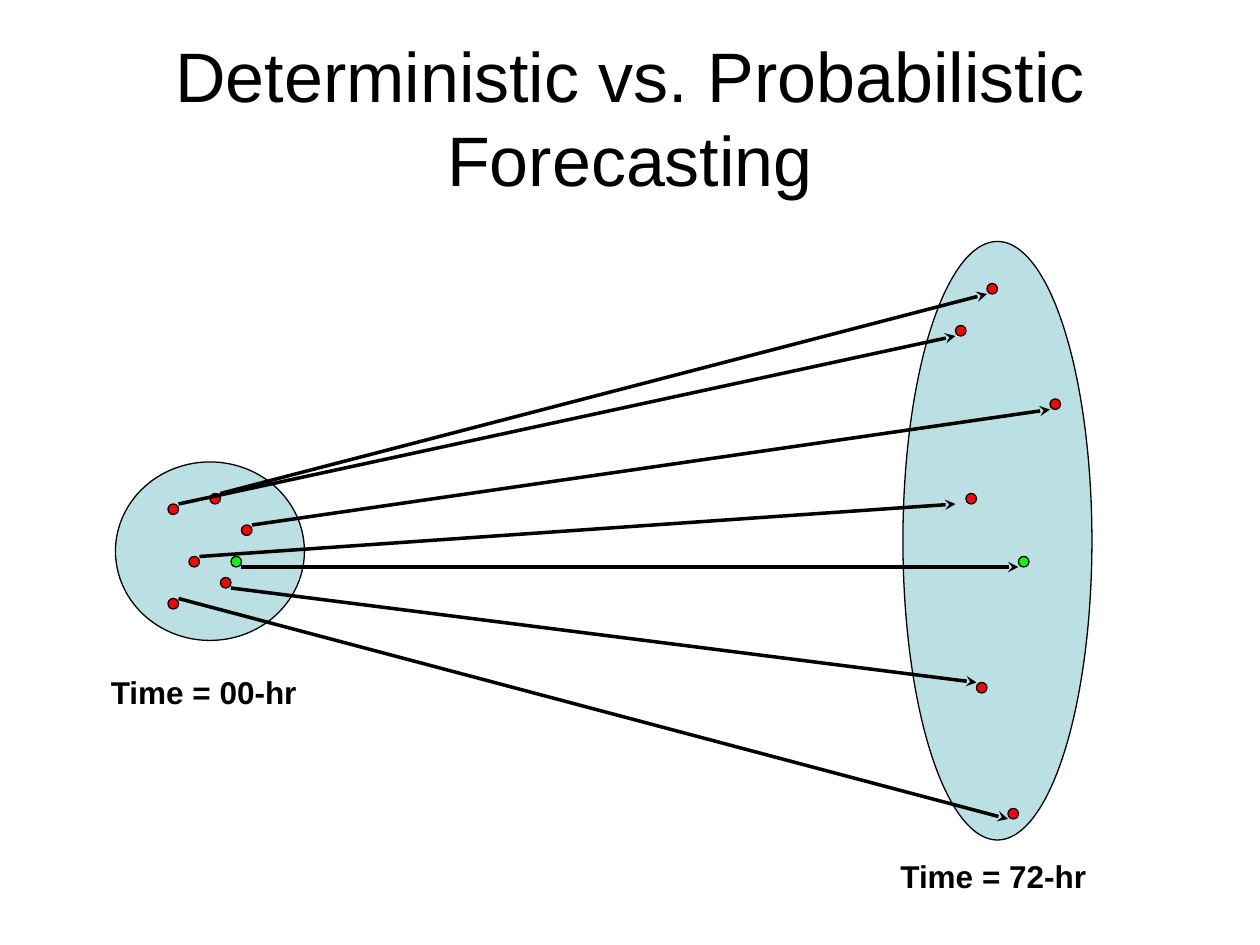
"""Build the slide on deterministic versus probabilistic forecasting."""
from typing import NamedTuple

import lxml.etree
import pptx
import pptx.dml.color
import pptx.enum.shapes
import pptx.enum.text
import pptx.oxml.ns
import pptx.util

EMU_PER_PX = 7620
DOT = 10
BLACK, PALE_BLUE, RED, GREEN = "000000", "BBE0E3", "FF0000", "00FF00"
CENTER = pptx.enum.text.PP_ALIGN.CENTER
MIDDLE = pptx.enum.text.MSO_ANCHOR.MIDDLE
NO_FIT = pptx.enum.text.MSO_AUTO_SIZE.NONE
GROW = pptx.enum.text.MSO_AUTO_SIZE.SHAPE_TO_FIT_TEXT
TITLE_FONT = {"name": "Arial", "size": pptx.util.Pt(40), "bold": False}
LABEL_FONT = {"name": "Arial", "size": pptx.util.Pt(18), "bold": True}
TITLE_FRAME = {"word_wrap": True, "auto_size": NO_FIT, "vertical_anchor": MIDDLE}
LABEL_FRAME = {"word_wrap": True, "auto_size": GROW}


class Box(NamedTuple):
    """Left, top, width and height in px."""

    left: int
    top: int
    width: int
    height: int


class Member(NamedTuple):
    """One forecast: dot offsets in both clouds, arrow offsets from the dots."""

    start: tuple
    end: tuple
    tail: tuple = (DOT, 0)
    head: tuple = (0, DOT)
    color: str = RED


TITLE_BOX = Box(60, 36, 1080, 150)
START_BOX = Box(110, 440, 180, 170)
END_BOX = Box(860, 230, 180, 570)
MEMBERS = [
    Member((90, 30), (80, 40)),
    Member((50, 40), (50, 80)),
    Member((120, 60), (140, 150)),
    Member((70, 90), (60, 240), head=(-DOT, DOT)),
    Member((50, 130), (100, 540)),
    Member((100, 110), (70, 420), tail=(DOT, DOT), head=(0, 0)),
    Member((110, 90), (110, 300), tail=(DOT, DOT), color=GREEN),
]


def px(*lengths):
    """Turn px lengths into EMU."""
    return [pptx.util.Emu(length * EMU_PER_PX) for length in lengths]


def rgb(color):
    """Turn a hex string into a colour."""
    return pptx.dml.color.RGBColor.from_string(color)


def apply_format(target, values):
    """Set each named attribute on the target."""
    for name, value in values.items():
        setattr(target, name, value)


def write_text(holder, text, frame_format, font_format):
    """Write one centred black paragraph."""
    frame = holder.text_frame
    apply_format(frame, frame_format)
    paragraph = frame.paragraphs[0]
    paragraph.alignment = CENTER
    run = paragraph.add_run()
    run.text = text
    apply_format(run.font, font_format)
    run.font.color.rgb = rgb(BLACK)


def style_line(line, width):
    """Give a line its black colour and width in points."""
    line.color.rgb = rgb(BLACK)
    line.width = pptx.util.Pt(width)


def add_ellipse(slide, box, color):
    """Add a filled ellipse with a thin outline."""
    ellipse = slide.shapes.add_shape(pptx.enum.shapes.MSO_SHAPE.OVAL, *px(*box))
    ellipse.shadow.inherit = False
    ellipse.fill.solid()
    ellipse.fill.fore_color.rgb = rgb(color)
    style_line(ellipse.line, 0.75)


def add_title(slide, box, text):
    """Place and fill the title placeholder."""
    title = slide.shapes.title
    apply_format(title, dict(zip(Box._fields, px(*box))))
    write_text(title, text, TITLE_FRAME, TITLE_FONT)


def add_label(slide, box, text, shift, gap):
    """Add a time label below a cloud."""
    place = Box(box.left + shift, box.top + box.height + gap, 232, 48)
    label = slide.shapes.add_textbox(*px(*place))
    write_text(label, text, LABEL_FRAME, LABEL_FONT)


def add_dots(slide, box, side):
    """Add the dot of every member on one side."""
    for member in MEMBERS:
        x, y = getattr(member, side)
        add_ellipse(slide, Box(box.left + x, box.top + y, DOT, DOT), member.color)


def add_arrows(slide, start_box, end_box):
    """Join the start and end dots of every member."""
    for member in MEMBERS:
        tail = map(sum, zip(start_box[:2], member.start, member.tail))
        head = map(sum, zip(end_box[:2], member.end, member.head))
        arrow = slide.shapes.add_connector(
            pptx.enum.shapes.MSO_CONNECTOR.STRAIGHT, *px(*tail, *head)
        )
        style_line(arrow.line, 2)
        outline = arrow.line._get_or_add_ln()
        qn = pptx.oxml.ns.qn
        lxml.etree.SubElement(outline, qn("a:tailEnd"), type="stealth")
        lxml.etree.SubElement(arrow._element.spPr, qn("a:effectLst"))


def main():
    """Build and save the slide."""
    deck = pptx.Presentation()
    deck.slide_width, deck.slide_height = px(1200, 900)
    slide = deck.slides.add_slide(deck.slide_layouts[5])
    add_title(slide, TITLE_BOX, "Deterministic vs. Probabilistic Forecasting")
    add_ellipse(slide, START_BOX, PALE_BLUE)
    add_dots(slide, START_BOX, "start")
    add_label(slide, START_BOX, "Time = 00-hr", shift=-32, gap=25)
    add_ellipse(slide, END_BOX, PALE_BLUE)
    add_arrows(slide, START_BOX, END_BOX)
    add_dots(slide, END_BOX, "end")
    add_label(slide, END_BOX, "Time = 72-hr", shift=-30, gap=10)
    deck.save("out.pptx")


if __name__ == "__main__":
    main()
